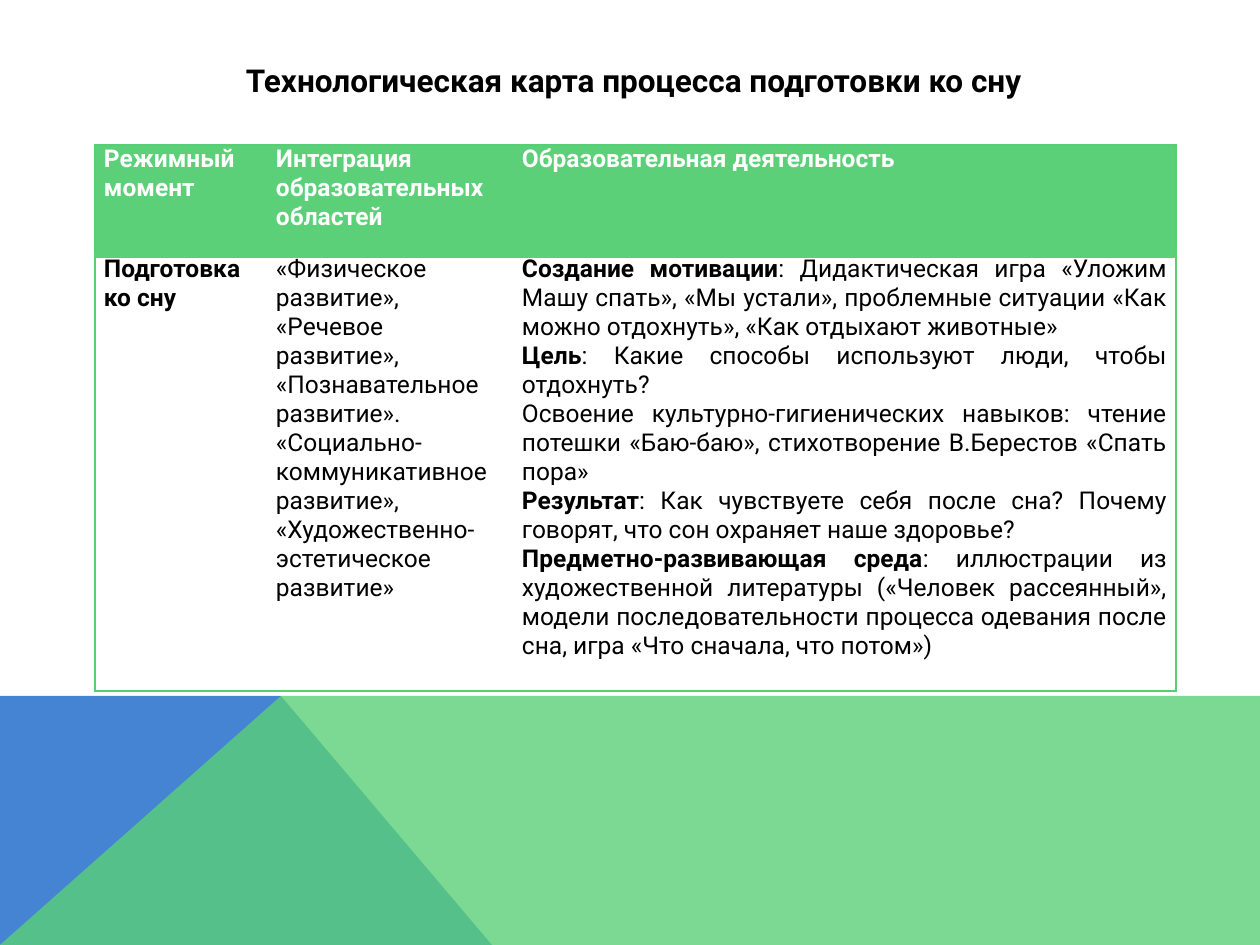
import pptx
import pptx.util
import pptx.dml.color
import pptx.enum.text
import pptx.oxml
import pptx.oxml.ns
from lxml import etree

PX = 914400 / 126
FONT = "Roboto"
WHITE = pptx.dml.color.RGBColor(0xFF, 0xFF, 0xFF)
BLACK = pptx.dml.color.RGBColor(0x00, 0x00, 0x00)
BLUE = pptx.dml.color.RGBColor(0x45, 0x84, 0xD3)
GREEN = pptx.dml.color.RGBColor(0x5B, 0xD0, 0x78)
BORDER = pptx.dml.color.RGBColor(0x56, 0xCE, 0x74)
ALIGN = pptx.enum.text.PP_ALIGN

HEADERS = ["Режимный момент", "Интеграция образовательных областей",
           "Образовательная деятельность"]
AREAS = ("«Физическое развитие», «Речевое развитие», «Познавательное развитие». "
         "«Социально-коммуникативное развитие», «Художественно-эстетическое развитие»")
ACTIVITIES = [
    [("Создание мотивации", True),
     (": Дидактическая игра «Уложим Машу спать», «Мы устали», проблемные ситуации "
      "«Как можно отдохнуть», «Как отдыхают животные»", False)],
    [("Цель", True),
     (": Какие способы используют люди, чтобы отдохнуть?", False)],
    [("Освоение культурно-гигиенических навыков: чтение потешки «Баю-баю», "
      "стихотворение В.Берестов «Спать пора»", False)],
    [("Результат", True),
     (": Как чувствуете себя после сна? Почему говорят, что сон охраняет наше "
      "здоровье?", False)],
    [("Предметно-развивающая среда", True),
     (": иллюстрации из художественной литературы («Человек рассеянный», модели "
      "последовательности процесса одевания после сна, игра «Что сначала, что "
      "потом»)", False)],
]
ROWS = [
    [[[(text, True)]] for text in HEADERS],
    [[[("Подготовка ко сну", True)]], [[(AREAS, False)]], ACTIVITIES],
]
COLUMN_WIDTHS = [172, 246, 663]
ROW_HEIGHTS = [110, 436]


def px(n):
    return pptx.util.Emu(round(n * PX))


def add_polygon(s, points, color, alpha=None):
    builder = s.shapes.build_freeform(*points[0], scale=PX)
    builder.add_line_segments(points[1:], close=True)
    sp = builder.convert_to_shape()
    sp.shadow.inherit = False
    sp.fill.solid()
    sp.fill.fore_color.rgb = color
    sp.line.fill.background()
    if alpha is not None:
        clr = sp.fill._xPr.find(".//" + pptx.oxml.ns.qn("a:srgbClr"))
        etree.SubElement(clr, pptx.oxml.ns.qn("a:alpha"), val=str(alpha * 1000))


def write_paragraphs(tf, paragraphs, size, color, align):
    for i, runs in enumerate(paragraphs):
        p = tf.paragraphs[0] if i == 0 else tf.add_paragraph()
        p.alignment = align
        for text, bold in runs:
            r = p.add_run()
            r.text = text
            r.font.name = FONT
            r.font.size = pptx.util.Pt(size)
            r.font.bold = bold
            r.font.color.rgb = color


def add_title(s, text):
    sp = s.shapes.add_textbox(px(194), px(55), px(840), px(50))
    tf = sp.text_frame
    tf.word_wrap = True
    tf.auto_size = pptx.enum.text.MSO_AUTO_SIZE.SHAPE_TO_FIT_TEXT
    write_paragraphs(tf, [[(text, True)]], 18, BLACK, ALIGN.RIGHT)


def set_borders(cell, borders):
    tcPr = cell._tc.get_or_add_tcPr()
    for side in "LRTB":
        ln = etree.SubElement(tcPr, pptx.oxml.ns.qn(f"a:ln{side}"))
        if side not in borders:
            etree.SubElement(ln, pptx.oxml.ns.qn("a:noFill"))
            continue
        color, width = borders[side]
        ln.set("w", str(pptx.util.Pt(width)))
        fill = etree.SubElement(ln, pptx.oxml.ns.qn("a:solidFill"))
        etree.SubElement(fill, pptx.oxml.ns.qn("a:srgbClr"), val=str(color))


def cell_borders(row, column):
    outer = (BORDER, 0.75)
    divider = (GREEN, 4)
    borders = {"T": outer, "B": divider} if row == 0 else {"T": divider, "B": outer}
    if column == 0:
        borders["L"] = outer
    if column == len(COLUMN_WIDTHS) - 1:
        borders["R"] = outer
    return borders


def add_schedule(s):
    frame = s.shapes.add_table(len(ROWS), len(COLUMN_WIDTHS), px(95), px(145),
                               px(sum(COLUMN_WIDTHS)), px(sum(ROW_HEIGHTS)))
    table = frame.table
    table.first_row = False
    table.horz_banding = False
    for column, width in zip(table.columns, COLUMN_WIDTHS):
        column.width = px(width)
    for row, height in zip(table.rows, ROW_HEIGHTS):
        row.height = px(height)
    for i, row in enumerate(ROWS):
        for j, paragraphs in enumerate(row):
            cell = table.cell(i, j)
            cell.margin_left = cell.margin_right = px(9)
            cell.margin_top = cell.margin_bottom = 0
            set_borders(cell, cell_borders(i, j))
            if i == 0:
                cell.fill.solid()
                cell.fill.fore_color.rgb = GREEN
            else:
                cell.fill.background()
            write_paragraphs(cell.text_frame, paragraphs, 14,
                             WHITE if i == 0 else BLACK, ALIGN.JUSTIFY)


def main():
    prs = pptx.Presentation()
    prs.slide_width, prs.slide_height = px(1260), px(945)
    s = prs.slides.add_slide(prs.slide_layouts[6])
    add_polygon(s, [(0, 945), (0, 696), (281, 696), (492, 945)], BLUE)
    add_polygon(s, [(0, 945), (281, 696), (1260, 696), (1260, 945)], GREEN, 80)
    add_schedule(s)
    add_title(s, "Технологическая карта процесса подготовки ко сну")
    prs.save("out.pptx")


if __name__ == "__main__":
    main()
